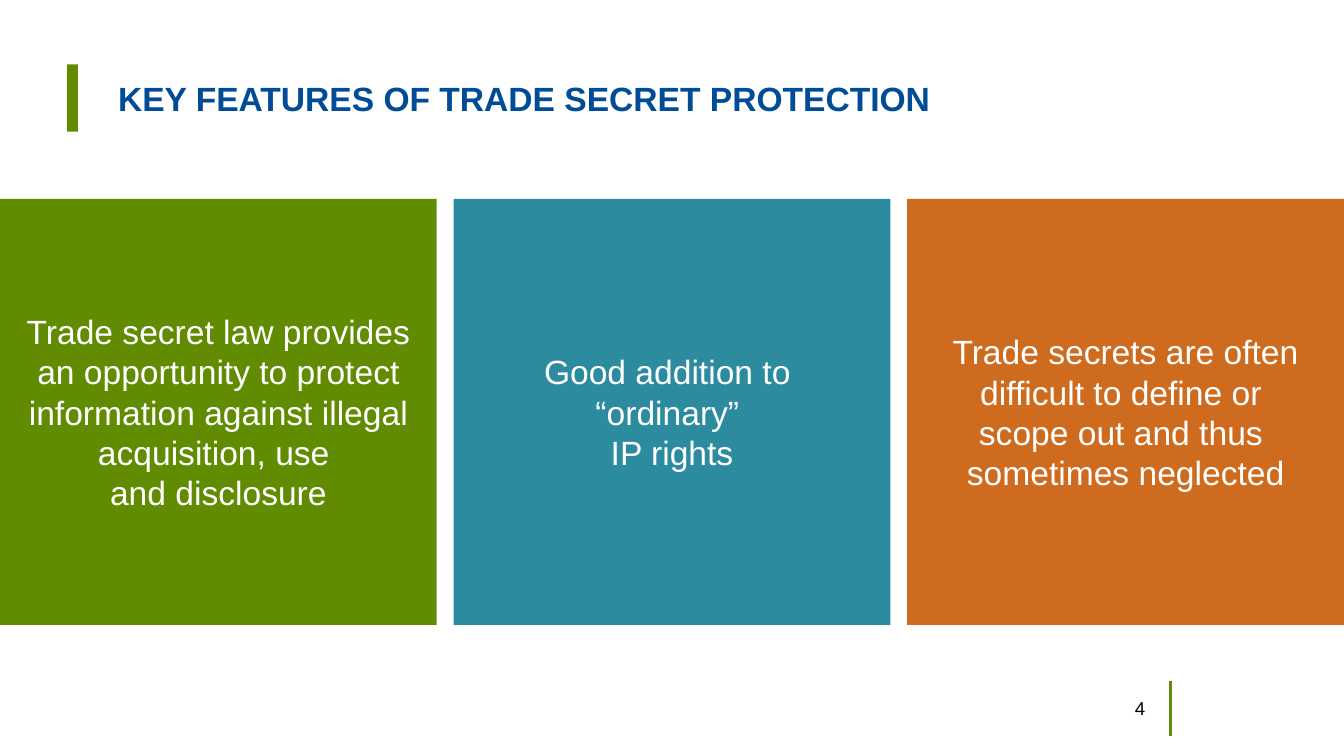
from pptx import Presentation, util as u
from pptx.dml.color import RGBColor
from pptx.enum import shapes, text
from pptx.oxml.ns import qn
from lxml import etree

COLORS = {"green": "618B00", "teal": "2C8B9F", "orange": "CF6B1F",
          "blue": "004C97", "white": "FFFFFF", "black": "000000"}
FONT = "Arial"
PAGE_WIDTH = 10
PAGE_HEIGHT = PAGE_WIDTH * 9 / 16
CARDS = [
    ("green", ["Trade secret law provides an opportunity to protect "
               "information against illegal acquisition, use ",
               "and disclosure"]),
    ("teal", ["Good addition to ", "“ordinary” ", "IP rights"]),
    ("orange", ["Trade secrets are often difficult to define or ",
                "scope out and thus ", "sometimes neglected"]),
]


def color(name):
    return RGBColor.from_string(COLORS[name])


def add_block(page, left, top, width, height, fill):
    block = page.shapes.add_shape(
        shapes.MSO_SHAPE.RECTANGLE, u.Inches(left), u.Inches(top),
        u.Inches(width), u.Inches(height))
    block.shadow.inherit = False
    block.fill.solid()
    block.fill.fore_color.rgb = color(fill)
    block.line.fill.background()
    return block


def add_text_box(page, left, top, width, height):
    return page.shapes.add_textbox(u.Inches(left), u.Inches(top),
                                   u.Inches(width), u.Inches(height))


def write(box, lines, size, ink, align, bold=False, spacing=None):
    frame = box.text_frame
    frame.word_wrap = True
    frame.vertical_anchor = text.MSO_ANCHOR.MIDDLE
    para = frame.paragraphs[0]
    para.alignment = align
    para.line_spacing = spacing
    for index, line in enumerate(lines):
        if index:
            para.add_line_break()
        span = para.add_run()
        span.text = line
        span.font.name = FONT
        span.font.size = u.Pt(size)
        span.font.bold = bold
        span.font.color.rgb = color(ink)


def add_header(page, left, top, width, height):
    # Accent bar and title
    add_block(page, left, top + 0.07, 0.08, 0.5, "green")
    title = add_text_box(page, left + 0.28, top, width - 0.28, height)
    write(title, ["KEY FEATURES OF TRADE SECRET PROTECTION"], 18, "blue",
          text.PP_ALIGN.LEFT, bold=True, spacing=0.9)


def add_cards(page, left, top, width, height):
    # Equal columns across the full width
    card_width = 3.25
    step = (width - card_width) / (len(CARDS) - 1)
    for index, (fill, lines) in enumerate(CARDS):
        card = add_block(page, left + index * step, top,
                         card_width, height, fill)
        frame = card.text_frame
        frame.margin_left = frame.margin_right = u.Inches(0.05)
        frame.margin_top = frame.margin_bottom = u.Inches(0.3)
        write(card, lines, 18, "white", text.PP_ALIGN.CENTER)


def add_footer(page, left, top, width, height):
    # Page number and divider
    number = add_text_box(page, left, top + 0.05, 0.67, 0.3)
    write(number, ["4"], 10, "black", text.PP_ALIGN.RIGHT)
    x = u.Inches(left + width)
    divider = page.shapes.add_connector(
        shapes.MSO_CONNECTOR.STRAIGHT, x, u.Inches(top),
        x, u.Inches(top + height))
    divider.line.color.rgb = color("green")
    divider.line.width = u.Pt(1.5)
    etree.SubElement(divider._element.spPr, qn("a:effectLst"))


def main():
    deck = Presentation()
    deck.slide_width = u.Inches(PAGE_WIDTH)
    deck.slide_height = u.Inches(PAGE_HEIGHT)
    page = deck.slides.add_slide(deck.slide_layouts[6])
    add_header(page, 0.5, 0.41, 8.39, 0.68)
    add_cards(page, 0, 1.48, PAGE_WIDTH, 3.17)
    add_footer(page, 7.95, 5.07, 0.76, 0.41)
    deck.save("out.pptx")


if __name__ == "__main__":
    main()
